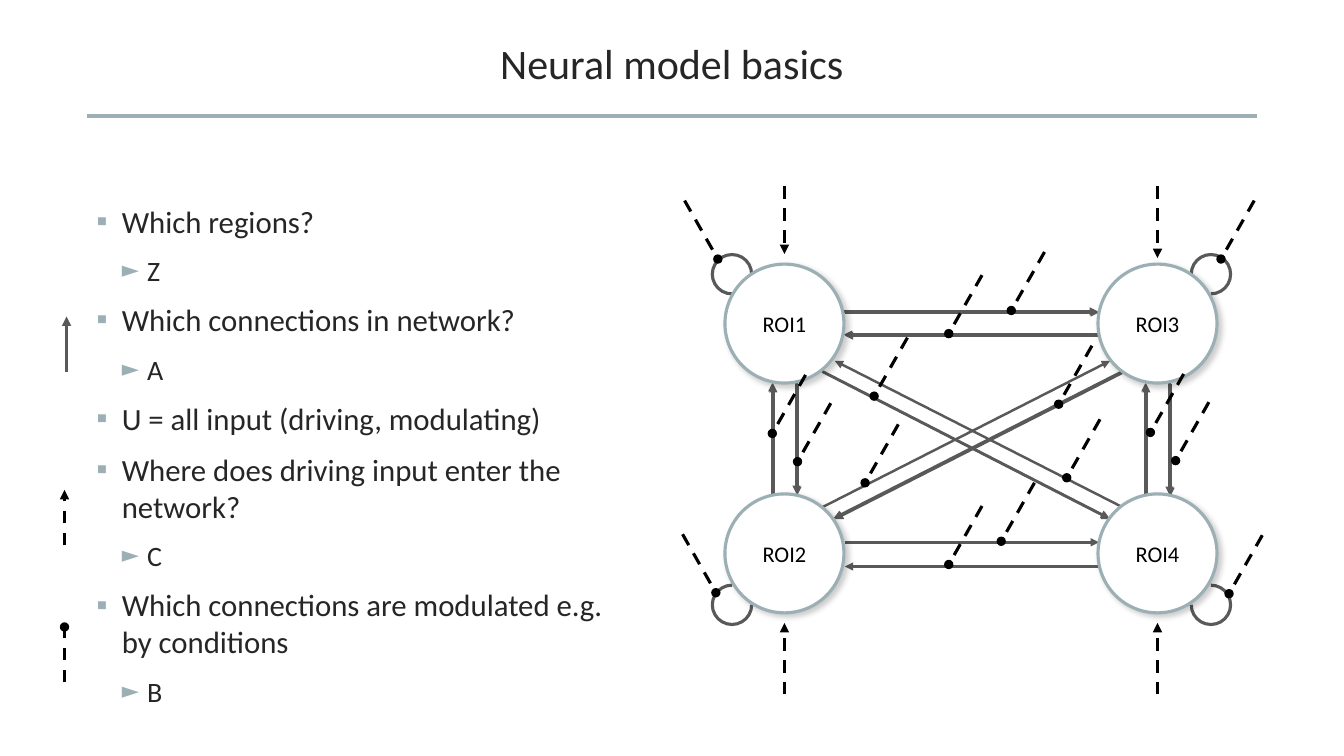
"""Build a slide that explains a four-region neural model."""
from lxml.etree import SubElement as Sub
from pptx import Presentation
from pptx.dml.color import RGBColor
from pptx.enum.dml import MSO_LINE as Dash
from pptx.enum.shapes import MSO_CONNECTOR as Conn, MSO_SHAPE as Shape
from pptx.enum.text import MSO_ANCHOR as Anchor, MSO_AUTO_SIZE as Fit, PP_ALIGN as Align
from pptx.oxml.ns import qn
from pptx.util import Inches, Pt

FONT = "Calibri"
INK, GREY, TEAL, BLACK, WHITE = "262626", "595959", "9BAFB5", "000000", "FFFFFF"

TITLE = "Neural model basics"
POINTS = [
    (0, "Which regions?"),
    (1, "Z"),
    (0, "Which connections in network?"),
    (1, "A"),
    (0, "U = all input (driving, modulating)"),
    (0, "Where does driving input enter the network?"),
    (1, "C"),
    (0, "Which connections are modulated e.g. by conditions"),
    (1, "B"),
]
BULLETS = [("▪", 100, 22), ("►", 80, 20)]

LEFT, RIGHT, TOP, LOW = 7.78, 11.48, 3.21, 5.49
SIZE, LOOP = 1.18, 0.39
NODES = [
    ("ROI3", RIGHT, TOP),
    ("ROI1", LEFT, TOP),
    ("ROI4", RIGHT, LOW),
    ("ROI2", LEFT, LOW),
]
LOOPS = [
    (LEFT, TOP, 90, 0),
    (RIGHT, TOP, 180, 90),
    (LEFT, LOW, 0, 270),
    (RIGHT, LOW, 270, 180),
]

DOUBLE = [
    (8.38, 3.1, 10.9, 3.1),
    (10.9, 3.33, 8.38, 3.33),
    (7.67, 4.91, 7.67, 3.81),
    (7.91, 3.81, 7.91, 4.91),
    (11.37, 4.92, 11.37, 3.81),
    (11.61, 3.81, 11.61, 4.92),
    (11.13, 3.7, 8.28, 5.15),
    (8.16, 3.69, 11.01, 5.15),
]
SINGLE = [
    (8.38, 5.38, 10.9, 5.38),
    (10.9, 5.62, 8.38, 5.62),
    (8.16, 5.03, 11.01, 3.58),
    (11.13, 5.03, 8.28, 3.58),
]
INPUTS = [
    (LEFT, 1.85, LEFT, 2.52),
    (RIGHT, 1.85, RIGHT, 2.56),
    (LEFT, 6.89, LEFT, 6.18),
    (RIGHT, 6.89, RIGHT, 6.18),
]
KEYS = [
    (0.64, 5.41, BLACK, Dash.DASH, "triangle"),
    (0.66, 3.69, GREY, None, "triangle"),
    (0.64, 6.77, BLACK, Dash.DASH, "oval"),
]
REACH, DROP = 0.33, 0.58
MODS = [
    (10.03, 3.08), (9.41, 3.31), (12.19, 5.89), (9.93, 5.37), (9.41, 5.6),
    (10.5, 4.01), (8.67, 3.93), (10.58, 4.74), (8.58, 4.79), (7.91, 4.58),
    (7.66, 4.3), (11.66, 4.57), (11.41, 4.29), (12.11, 2.57),
]
MIRROR = [(7.12, 2.57), (7.1, 5.88)]


def paint(color, code):
    color.rgb = RGBColor.from_string(code)


def fill(shape, code):
    shape.fill.solid()
    paint(shape.fill.fore_color, code)


def style(para, size, code):
    for run in para.runs:
        run.font.size, run.font.name = Pt(size), FONT
        paint(run.font.color, code)


def inset(frame, gap):
    frame.margin_left = frame.margin_right = Inches(gap)
    frame.margin_top = frame.margin_bottom = Inches(gap)


def line(slide, ends, code, width, dash=None, tip=None):
    link = slide.shapes.add_connector(Conn.STRAIGHT, *map(Inches, ends))
    paint(link.line.color, code)
    link.line.width = Pt(width)
    if dash:
        link.line.dash_style = dash
    if tip:
        Sub(link.line._get_or_add_ln(), qn("a:tailEnd"), type=tip)
    Sub(link._element.spPr, qn("a:effectLst"))


def disc(slide, kind, x, y, size, code):
    box = (x - size / 2, y - size / 2, size, size)
    shape = slide.shapes.add_shape(kind, *map(Inches, box))
    shape.shadow.inherit = False
    paint(shape.line.color, code)
    shape.line.width = Pt(2.25)
    return shape


def loop(slide, x, y, start, end):
    side = -0.52 if x == LEFT else 0.53
    rise = -0.49 if y == TOP else 0.51
    arc = disc(slide, Shape.ARC, x + side, y + rise, LOOP, GREY)
    arc.fill.background()
    for i, angle in enumerate((start, end)):
        arc.adjustments[i] = angle * 0.6


def node(slide, name, x, y):
    ring = disc(slide, Shape.OVAL, x, y, SIZE, TEAL)
    fill(ring, WHITE)
    glow = Sub(ring._element.spPr.find(qn("a:effectLst")), qn("a:outerShdw"),
               blurRad=str(Pt(4)), dist=str(Pt(3)), dir="2700000", rotWithShape="0")
    tint = Sub(glow, qn("a:srgbClr"), val=BLACK)
    Sub(tint, qn("a:alpha"), val="20000")
    frame = ring.text_frame
    inset(frame, 0)
    frame.vertical_anchor = Anchor.MIDDLE
    frame.text = name
    frame.paragraphs[0].alignment = Align.CENTER
    style(frame.paragraphs[0], 16, BLACK)


def head(slide):
    title = slide.shapes.title
    title.left, title.top, title.width, title.height = map(Inches, (0.86, 0.29, 11.61, 0.73))
    fill(title, WHITE)
    frame = title.text_frame
    frame.text = TITLE
    frame.auto_size = Fit.NONE
    frame.vertical_anchor = Anchor.MIDDLE
    inset(frame, 0.2)
    para = frame.paragraphs[0]
    para.alignment, para.line_spacing = Align.CENTER, 0.9
    style(para, 30, INK)


def body(slide):
    frame = slide.shapes.add_textbox(*map(Inches, (0.86, 1.96, 5.55, 5.08))).text_frame
    frame.word_wrap = True
    for i, (level, text) in enumerate(POINTS):
        para = frame.add_paragraph() if i else frame.paragraphs[0]
        mark, scale, size = BULLETS[level]
        para.text, para.level, para.space_before = text, level, Pt(10)
        style(para, size, INK)
        props = para._p.get_or_add_pPr()
        props.set("marL", str(Inches(0.25 * (level + 1))))
        props.set("indent", str(Inches(-0.25)))
        Sub(Sub(props, qn("a:buClr")), qn("a:srgbClr"), val=TEAL)
        Sub(props, qn("a:buSzPct"), val=str(scale * 1000))
        Sub(props, qn("a:buFont"), typeface=FONT)
        Sub(props, qn("a:buChar"), char=mark)


def main():
    deck = Presentation()
    deck.slide_width, deck.slide_height = Inches(13.33), Inches(7.5)
    slide = deck.slides.add_slide(deck.slide_layouts[5])
    head(slide)
    line(slide, (0.86, 1.15, 12.47, 1.15), TEAL, 3)
    twins = [[v - 0.01 for v in ends] for ends in DOUBLE]
    for ends in DOUBLE + SINGLE + twins:
        line(slide, ends, GREY, 1.75, tip="triangle")
    body(slide)
    for ends in INPUTS:
        line(slide, ends, BLACK, 2.25, Dash.DASH, "triangle")
    for x, y, code, dash, tip in KEYS:
        line(slide, (x, y, x, y - 0.55), code, 2.25, dash, tip)
    for spot in LOOPS:
        loop(slide, *spot)
    for spot in NODES:
        node(slide, *spot)
    for spots, reach in ((MODS, REACH), (MIRROR, -REACH)):
        for x, y in spots:
            line(slide, (x + reach, y - DROP, x, y), BLACK, 2.25, Dash.DASH, "oval")
    deck.save("out.pptx")


if __name__ == "__main__":
    main()
